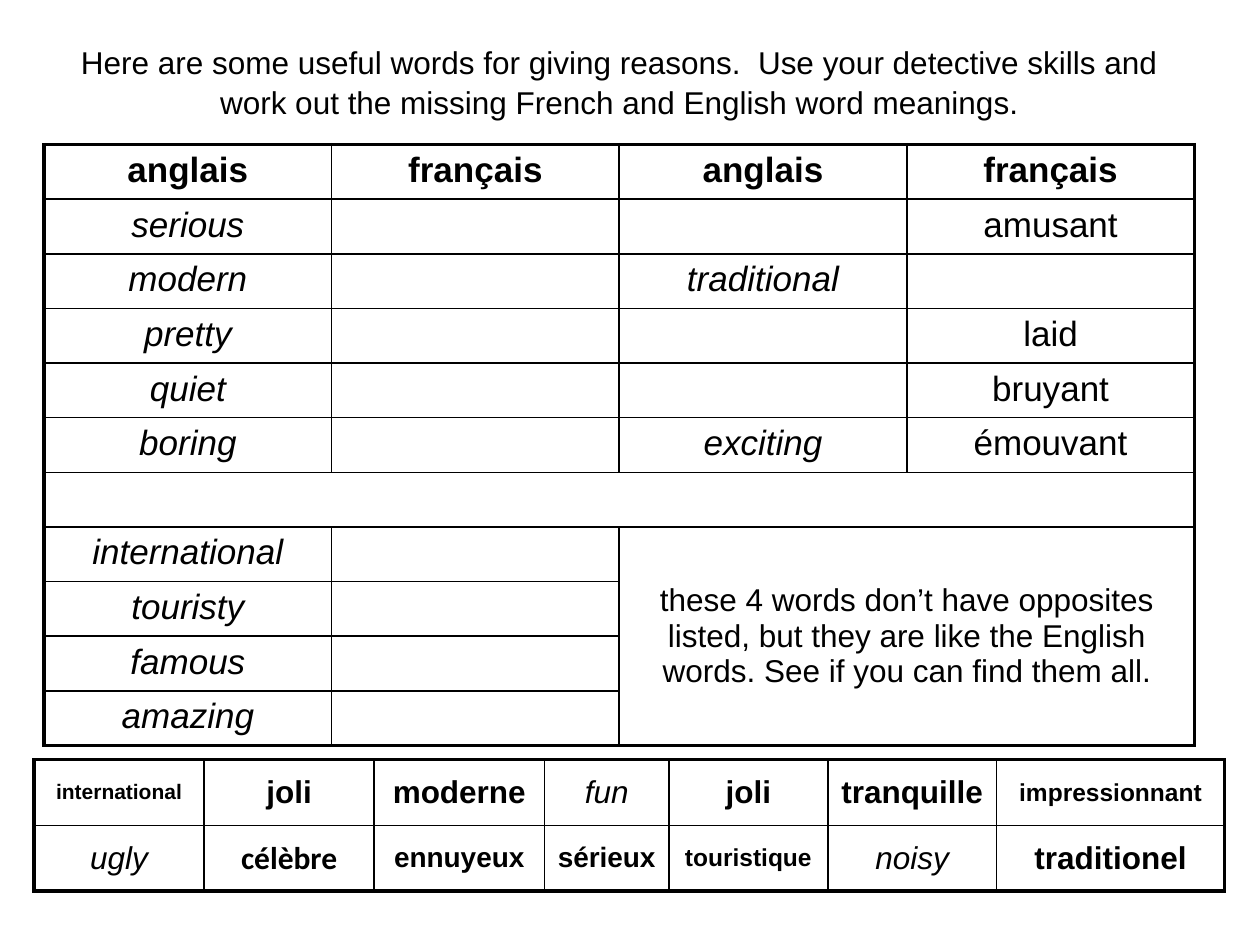
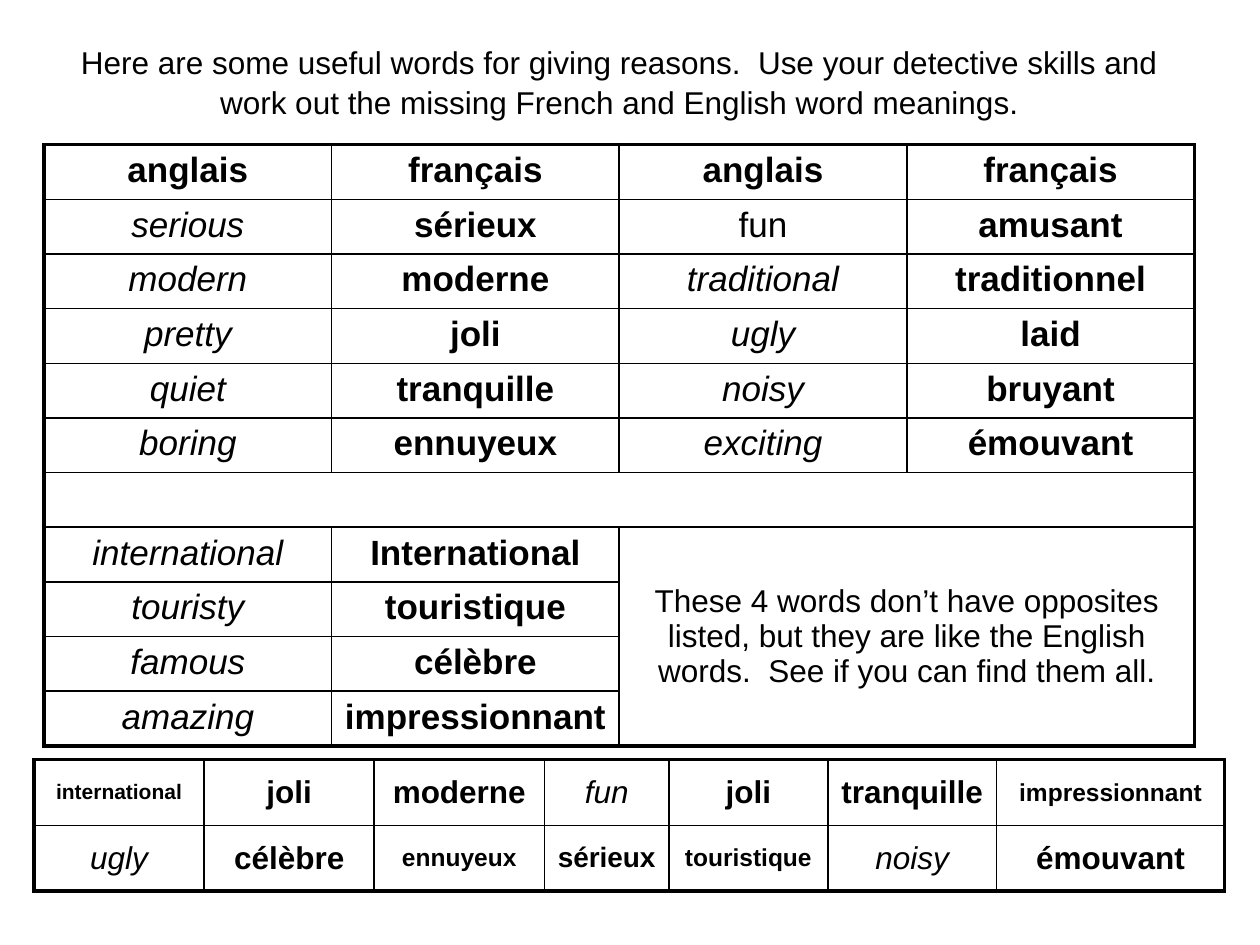
from dataclasses import dataclass

from lxml.etree import SubElement
from pptx import Presentation
from pptx.dml.color import RGBColor
from pptx.enum.text import MSO_ANCHOR as Anchor, PP_ALIGN as Align
from pptx.oxml.ns import qn
from pptx.util import Inches, Pt

INK = "000000"
FONT = "Arial"
THIN, THICK = 1, 2.25
WIDTH, HEIGHT = Inches(10), Inches(7.5)

TITLE_BOX = (0.035, 0.037, 0.913, 0.093)
LESSON_BOX = (0.035, 0.153, 0.913, 0.636)
BANK_BOX = (0.027, 0.804, 0.945, 0.139)
LESSON_COLUMNS = [1] * 4
BANK_COLUMNS = [1.35, 1.35, 1.35, 0.99, 1.26, 1.34, 1.81]
GAP_ROW = 6

TITLE = ("Here are some useful words for giving reasons.  Use your detective "
         "skills and work out the missing French and English word meanings.")


@dataclass
class Word:
    text: str
    size: int = 20
    bold: bool = False
    italic: bool = False
    font: str = FONT


def plain(text, size=20):
    return Word(text, size)


def strong(text, size=20, font=FONT):
    return Word(text, size, bold=True, font=font)


def slanted(text, size=20):
    return Word(text, size, italic=True)


HEADINGS = [strong(text) for text in ("anglais", "français") * 2]
OPPOSITES = ["serious", "modern", "pretty", "quiet", "boring"]
LOOKALIKES = ["international", "touristy", "famous", "amazing"]
BANK_TOP = [strong("international", 12), strong("joli", 18), strong("moderne", 18),
            slanted("fun", 18), strong("joli", 18), strong("tranquille", 18),
            strong("impressionnant", 14)]


def colour(value):
    return RGBColor.from_string(value)


def scale(box):
    left, top, width, height = box
    return (round(left * WIDTH), round(top * HEIGHT),
            round(width * WIDTH), round(height * HEIGHT))


def write(frame, word, space_before):
    para = frame.paragraphs[0]
    para.alignment = Align.CENTER
    font = para.font
    font.name, font.size = word.font, Pt(word.size)
    font.bold, font.italic = word.bold, word.italic
    font.color.rgb = colour(INK)
    para.add_run().text = word.text
    properties = para._p.get_or_add_pPr()
    spacing = SubElement(properties, qn("a:spcBef"))
    SubElement(spacing, qn("a:spcPct"), val=str(space_before * 1000))
    properties.insert(0, spacing)
    return para


def draw_borders(cell, widths):
    properties = cell._tc.get_or_add_tcPr()
    for place, (side, points) in enumerate(widths.items()):
        line = SubElement(properties, qn(f"a:ln{side}"), w=str(Pt(points)))
        fill = SubElement(line, qn("a:solidFill"))
        SubElement(fill, qn("a:srgbClr"), val=INK)
        properties.insert(place, line)


def add_grid(page, box, weights, rows, anchor, merges=()):
    left, top, width, height = scale(box)
    last_row, last_column = len(rows) - 1, len(weights) - 1
    table = page.shapes.add_table(len(rows), len(weights),
                                  left, top, width, height).table
    table.first_row = table.horz_banding = False
    for column, weight in zip(table.columns, weights):
        column.width = round(width * weight / sum(weights))
    for row in table.rows:
        row.height = round(height / len(rows))
    for start, end in merges:
        table.cell(*start).merge(table.cell(*end))
    for r, words in enumerate(rows):
        for c, word in enumerate(words):
            cell = table.cell(r, c)
            cell.fill.background()
            bottom, right = r, c
            if cell.is_merge_origin:
                bottom += cell.span_height - 1
                right += cell.span_width - 1
            draw_borders(cell, {
                "L": THICK if c == 0 else THIN,
                "R": THICK if right == last_column else THIN,
                "T": THICK if r == 0 else THIN,
                "B": THICK if bottom == last_row else THIN})
            cell.vertical_anchor = Anchor.MIDDLE if bottom > r else anchor
            if word:
                write(cell.text_frame, word, 20)


def add_title(page, box):
    frame = page.shapes.add_textbox(*scale(box)).text_frame
    frame.word_wrap = True
    para = write(frame, plain(TITLE, 18), 50)
    para.line_spacing = 1.06


def add_lesson(page, box, answers, hint, lookalike_answers):
    rows = [HEADINGS]
    rows += [[slanted(english), *row] for english, row in zip(OPPOSITES, answers)]
    rows.append([None] * 4)
    rows += [[slanted(english), french, None, None]
             for english, french in zip(LOOKALIKES, lookalike_answers)]
    hint_row = GAP_ROW + 1
    rows[hint_row][2] = plain(hint, 18)
    merges = [((GAP_ROW, 0), (GAP_ROW, 3)),
              ((hint_row, 2), (len(rows) - 1, 3))]
    add_grid(page, box, LESSON_COLUMNS, rows, Anchor.TOP, merges)


def add_page(deck, answers, hint, lookalike_answers, bank_bottom):
    page = deck.slides.add_slide(deck.slide_layouts[6])
    add_lesson(page, LESSON_BOX, answers, hint, lookalike_answers)
    add_title(page, TITLE_BOX)
    add_grid(page, BANK_BOX, BANK_COLUMNS, [BANK_TOP, bank_bottom], Anchor.MIDDLE)


def bank_bottom(famous, boring, last):
    return [slanted("ugly", 18), famous, boring, strong("sérieux", 16),
            strong("touristique", 14), slanted("noisy", 18), strong(last, 18)]


def main():
    deck = Presentation()
    deck.slide_width, deck.slide_height = WIDTH, HEIGHT
    add_page(
        deck,
        [(None, None, plain("amusant")),
         (None, slanted("traditional"), None),
         (None, None, plain("laid")),
         (None, None, plain("bruyant")),
         (None, slanted("exciting"), plain("émouvant"))],
        "these 4 words don’t have opposites listed, but they are like the "
        "English words. See if you can find them all.",
        [None] * 4,
        bank_bottom(strong("célèbre", 18, "Calibri"), strong("ennuyeux", 16),
                    "traditionel"))
    add_page(
        deck,
        [(strong("sérieux"), plain("fun"), strong("amusant")),
         (strong("moderne"), slanted("traditional"), strong("traditionnel")),
         (strong("joli"), slanted("ugly"), strong("laid")),
         (strong("tranquille"), slanted("noisy"), strong("bruyant")),
         (strong("ennuyeux"), slanted("exciting"), strong("émouvant"))],
        "These 4 words don’t have opposites listed, but they are like the "
        "English words.  See if you can find them all.",
        [strong(text) for text in
         ("International", "touristique", "célèbre", "impressionnant")],
        bank_bottom(strong("célèbre", 18), strong("ennuyeux", 14), "émouvant"))
    deck.save("out.pptx")


if __name__ == "__main__":
    main()
